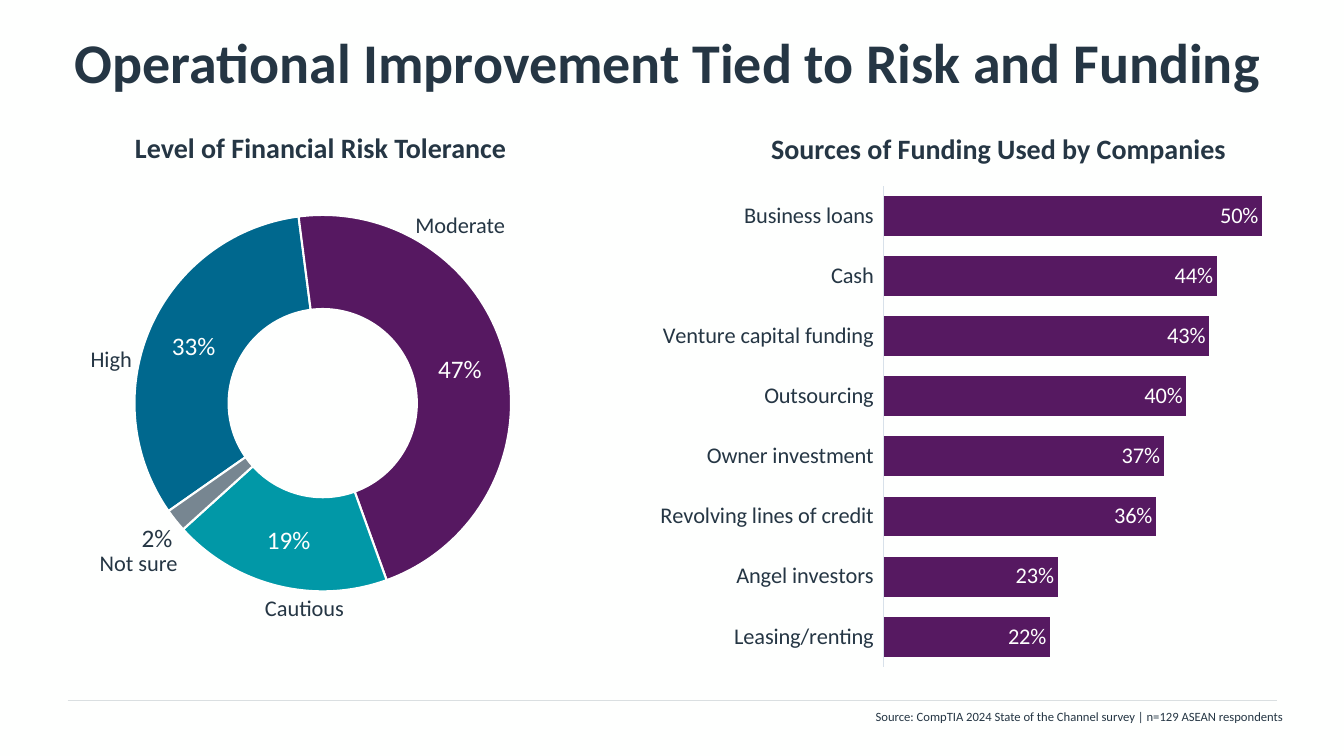
"""Build the slide on risk tolerance and funding sources."""
from dataclasses import dataclass

from lxml.etree import SubElement
from pptx import Presentation
from pptx.chart.chart import Chart
from pptx.chart.data import CategoryChartData
from pptx.dml.color import RGBColor
from pptx.enum.chart import XL_CHART_TYPE, XL_LABEL_POSITION, XL_TICK_LABEL_POSITION, XL_TICK_MARK
from pptx.enum.shapes import MSO_CONNECTOR
from pptx.enum.text import MSO_ANCHOR, MSO_AUTO_SIZE, PP_ALIGN
from pptx.oxml import parse_xml
from pptx.oxml.ns import nsdecls, qn
from pptx.slide import Slide
from pptx.util import Inches, Pt


@dataclass(frozen=True)
class Theme:
    """Colours, font and type sizes of the slide."""
    font: str = "Calibri"
    ink: str = "253644"
    paper: str = "FEFFFE"
    rule: str = "DADFE1"
    axis: str = "D8E1EA"
    bar: str = "561961"
    title: int = 40
    heading: int = 20
    value: int = 18
    label: int = 16
    source: int = 9


@dataclass(frozen=True)
class Caption:
    """A line of text and its place in inches."""
    text: str
    left: float
    top: float
    width: float
    height: float
    size: int
    bold: bool = False
    wrap: bool = False
    align: PP_ALIGN = PP_ALIGN.LEFT


@dataclass(frozen=True)
class RiskLevel:
    """A share of the ring, with its colour and the place of its name."""
    name: str
    share: float
    color: str
    left: float
    top: float
    width: float


@dataclass(frozen=True)
class Funding:
    """A funding source and the share of companies using it."""
    name: str
    share: float


THEME = Theme()
RISK_LEVELS = [
    RiskLevel("High", 0.33, "00688E", 0.8, 3.38, 0.62),
    RiskLevel("Moderate", 0.47, "561861", 4.02, 2.05, 1.11),
    RiskLevel("Cautious", 0.19, "0198A7", 2.53, 5.85, 1),
    RiskLevel("Not sure", 0.02, "778691", 0.89, 5.4, 0.99),
]
FUNDING = [
    Funding("Leasing/renting", 0.22),
    Funding("Angel investors", 0.23),
    Funding("Revolving lines of credit", 0.36),
    Funding("Owner investment", 0.37),
    Funding("Outsourcing", 0.4),
    Funding("Venture capital funding", 0.43),
    Funding("Cash", 0.44),
    Funding("Business loans", 0.5),
]
CAPTIONS = [
    Caption("Level of Financial Risk Tolerance", 1.24, 1.25, 3.92, 0.44, THEME.heading, bold=True),
    Caption("Sources of Funding Used by Companies", 7.55, 1.26, 4.75, 0.44, THEME.heading, bold=True),
    Caption("Source: CompTIA 2024 State of the Channel survey | n=129 ASEAN respondents",
            6.33, 6.98, 6.49, 0.25, THEME.source, wrap=True, align=PP_ALIGN.RIGHT),
] + [Caption(level.name, level.left, level.top, level.width, 0.37, THEME.label) for level in RISK_LEVELS]


def rgb(color: str) -> RGBColor:
    """Turn a hex string into a colour."""
    return RGBColor.from_string(color)


def style_font(font, size: int, color: str = THEME.ink, bold: bool = False) -> None:
    """Apply the theme font with a size, colour and weight."""
    font.name, font.size, font.bold = THEME.font, Pt(size), bold
    font.color.rgb = rgb(color)


def add_title(slide: Slide, text: str) -> None:
    """Place and format the title placeholder."""
    title = slide.shapes.title
    title.left, title.top, title.width, title.height = map(Inches, (0.67, -0.02, 12, 1.25))
    frame = title.text_frame
    frame.margin_left, frame.vertical_anchor = 0, MSO_ANCHOR.MIDDLE
    frame.auto_size = MSO_AUTO_SIZE.NONE
    frame.paragraphs[0].alignment = PP_ALIGN.CENTER
    run = frame.paragraphs[0].add_run()
    run.text = text
    style_font(run.font, THEME.title, bold=True)


def add_caption(slide: Slide, caption: Caption) -> None:
    """Draw one caption as a text box."""
    place = map(Inches, (caption.left, caption.top, caption.width, caption.height))
    frame = slide.shapes.add_textbox(*place).text_frame
    frame.word_wrap = caption.wrap
    frame.auto_size = MSO_AUTO_SIZE.SHAPE_TO_FIT_TEXT
    frame.paragraphs[0].alignment = caption.align
    run = frame.paragraphs[0].add_run()
    run.text = caption.text
    style_font(run.font, caption.size, bold=caption.bold)


def add_footer_rule(slide: Slide) -> None:
    """Draw the thin line above the source."""
    rule = slide.shapes.add_connector(MSO_CONNECTOR.STRAIGHT, *map(Inches, (0.67, 6.95, 12.67, 6.95)))
    rule.line.color.rgb, rule.line.width = rgb(THEME.rule), Pt(0.5)
    SubElement(rule._element.spPr, qn("a:effectLst"))


def manual_layout(x: float, y: float, size: tuple[float, float] | None = None):
    """Make a chart layout: an inner plot area if sized, else a label offset."""
    parts = [("x", x), ("y", y)]
    if size:
        parts = [("layoutTarget", "inner"), ("xMode", "edge"), ("yMode", "edge"),
                 *parts, ("w", size[0]), ("h", size[1])]
    body = "".join(f'<c:{tag} val="{value}"/>' for tag, value in parts)
    return parse_xml(f'<c:layout {nsdecls("c")}><c:manualLayout>{body}</c:manualLayout></c:layout>')


def add_share_chart(slide: Slide, kind: XL_CHART_TYPE, shares: list, place: tuple,
                    plot_area: tuple, label_size: int) -> Chart:
    """Add a one-series percentage chart with value labels."""
    data = CategoryChartData(number_format="0%")
    data.categories = [item.name for item in shares]
    data.add_series("Series 1", [item.share for item in shares])
    chart = slide.shapes.add_chart(kind, *map(Inches, place), data).chart
    chart.has_legend = chart.has_title = False
    style_font(chart.font, label_size)
    area = chart._chartSpace.chart.plotArea
    for layout in area.findall(qn("c:layout")):
        area.remove(layout)
    area.insert(0, manual_layout(*plot_area))
    plot = chart.plots[0]
    plot.has_data_labels = True
    labels = plot.data_labels
    labels.show_value, labels.show_percentage = True, False
    labels.number_format, labels.number_format_is_linked = "0%", False
    style_font(labels.font, label_size, THEME.paper)
    return chart


def add_risk_ring(slide: Slide) -> None:
    """Draw the ring of risk tolerance levels."""
    chart = add_share_chart(slide, XL_CHART_TYPE.DOUGHNUT, RISK_LEVELS, (1.11, 1.98, 4.23, 4.24),
                            (0.053, 0.035, (0.883, 0.883)), THEME.value)
    plot = chart.plots[0]
    plot.vary_by_categories = True
    plot._element.find(qn("c:firstSliceAng")).set("val", "235")
    plot._element.find(qn("c:holeSize")).set("val", "50")
    points = plot.series[0].points
    for index, level in enumerate(RISK_LEVELS):
        fill, line = points[index].format.fill, points[index].format.line
        fill.solid()
        fill.fore_color.rgb = rgb(level.color)
        line.color.rgb, line.width = rgb(THEME.paper), Pt(1.5)
    style_font(points[len(RISK_LEVELS) - 1].data_label.font, THEME.value)
    outside_label = plot.series[0]._element.find(".//" + qn("c:dLbl"))
    outside_label.insert(1, manual_layout(-0.13, 0.11))
    labels = plot.series[0].data_labels
    labels.show_value, labels.show_percentage = True, False
    labels.number_format, labels.number_format_is_linked = "0%", False
    style_font(labels.font, THEME.value, THEME.paper)


def add_funding_bars(slide: Slide) -> None:
    """Draw the bars of funding sources."""
    chart = add_share_chart(slide, XL_CHART_TYPE.BAR_CLUSTERED, FUNDING, (5.53, 1.84, 7.14, 4.78),
                            (0.453, 0, (0.547, 1)), THEME.label)
    plot = chart.plots[0]
    plot.gap_width, plot.vary_by_categories = 51, False
    plot.data_labels.position = XL_LABEL_POSITION.INSIDE_END
    fill = plot.series[0].format.fill
    fill.solid()
    fill.fore_color.rgb = rgb(THEME.bar)
    names, scale = chart.category_axis, chart.value_axis
    names.major_tick_mark = names.minor_tick_mark = XL_TICK_MARK.NONE
    names.tick_label_position = XL_TICK_LABEL_POSITION.LOW
    names.format.line.color.rgb, names.format.line.width = rgb(THEME.axis), Pt(0.75)
    style_font(names.tick_labels.font, THEME.label)
    scale.minimum_scale, scale.maximum_scale = 0, 0.52
    scale.has_major_gridlines = scale.visible = False


def main() -> None:
    """Build and save the presentation."""
    deck = Presentation()
    deck.slide_width, deck.slide_height = Inches(13.33), Inches(7.5)
    slide = deck.slides.add_slide(deck.slide_layouts[5])
    slide.background.fill.solid()
    slide.background.fill.fore_color.rgb = rgb(THEME.paper)
    add_footer_rule(slide)
    add_title(slide, "Operational Improvement Tied to Risk and Funding")
    add_risk_ring(slide)
    add_funding_bars(slide)
    for caption in CAPTIONS:
        add_caption(slide, caption)
    deck.save("out.pptx")


if __name__ == "__main__":
    main()
